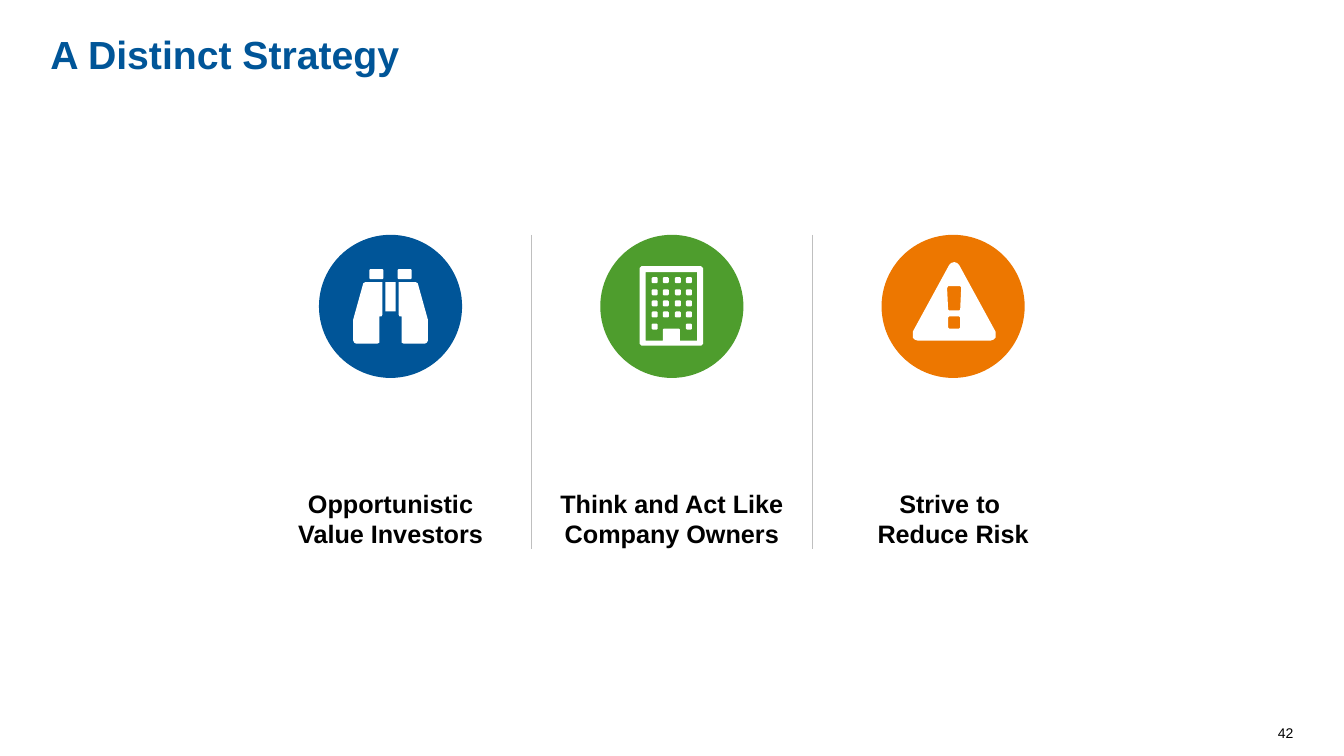
from dataclasses import dataclass

from lxml import etree
from pptx import Presentation
from pptx.dml.color import RGBColor
from pptx.enum.shapes import MSO_CONNECTOR, MSO_SHAPE
from pptx.enum.text import MSO_ANCHOR, PP_ALIGN
from pptx.oxml.ns import qn
from pptx.util import Inches, Pt

OVAL = MSO_SHAPE.OVAL
STRAIGHT = MSO_CONNECTOR.STRAIGHT
LEFT, CENTER, RIGHT = PP_ALIGN.LEFT, PP_ALIGN.CENTER, PP_ALIGN.RIGHT
TOP, BOTTOM = MSO_ANCHOR.TOP, MSO_ANCHOR.BOTTOM


@dataclass(frozen=True)
class Theme:
    font: str = "Arial"
    blue: str = "005598"
    green: str = "4E9D2D"
    orange: str = "ED7700"
    gray: str = "BFBFBF"
    black: str = "000000"
    white: str = "FFFFFF"
    title_size: int = 28
    label_size: int = 18
    number_size: int = 10
    rule_width: int = 1


class SlideBuilder:
    def __init__(self, presentation, theme):
        self.theme = theme
        self.column = presentation.slide_width / 100
        self.row = presentation.slide_height / 100
        self.slide = presentation.slides.add_slide(presentation.slide_layouts[6])

    def place(self, left, top, width, height):
        return (round(left * self.column), round(top * self.row),
                round(width * self.column), round(height * self.row))

    def text(self, words, box, size, color, bold=False, align=LEFT, anchor=TOP):
        frame = self.slide.shapes.add_textbox(*self.place(*box)).text_frame
        frame.word_wrap = True
        frame.vertical_anchor = anchor
        frame.margin_left = frame.margin_right = 0
        frame.margin_top = frame.margin_bottom = 0
        frame.text = words
        paragraph = frame.paragraphs[0]
        paragraph.alignment = align
        for run in paragraph.runs:
            run.font.name = self.theme.font
            run.font.size = Pt(size)
            run.font.bold = bold
            run.font.color.rgb = RGBColor.from_string(color)

    def divider(self, x, top, bottom):
        left, start, right, end = self.place(x, top, x, bottom)
        line = self.slide.shapes.add_connector(STRAIGHT, left, start, right, end)
        line.line.color.rgb = RGBColor.from_string(self.theme.gray)
        line.line.width = Pt(self.theme.rule_width)
        etree.SubElement(line._element.spPr, qn("a:effectLst"))

    def paint(self, shape, color):
        shape.shadow.inherit = False
        shape.fill.solid()
        shape.fill.fore_color.rgb = RGBColor.from_string(color)
        shape.line.fill.background()

    def circle(self, box, color):
        self.paint(self.slide.shapes.add_shape(OVAL, *self.place(*box)), color)

    def icon(self, outlines, x, y):
        builder = self.slide.shapes.build_freeform(*outlines[0][0], scale=Inches(0.01))
        for index, outline in enumerate(outlines):
            if index:
                builder.move_to(*outline[0])
            builder.add_line_segments(outline[1:], close=True)
        shape = builder.convert_to_shape(round(x * self.column), round(y * self.row))
        self.paint(shape, self.theme.white)


def soft_box(left, top, right, bottom, corner=1):
    return [(left + corner, top), (right - corner, top),
            (right, top + corner), (right, bottom - corner),
            (right - corner, bottom), (left + corner, bottom),
            (left, bottom - corner), (left, top + corner)]


def binoculars():
    barrel = [(8, -24), (25, -24), (27, -23), (37, 13), (37, 34), (36, 36),
              (34, 37), (13, 37), (11, 36), (11, 10), (9, 10), (8, 8)]
    halves = [soft_box(7, -37, 21, -27), barrel]
    mirrored = [[(-x, y) for x, y in outline] for outline in halves]
    bridge = [(-5, -24), (5, -24), (5, 5), (-5, 5)]
    return halves + mirrored + [bridge]


def building():
    interior = [(-26, -34), (25, -34), (25, 34), (8, 34), (8, 23), (7, 22),
                (-8, 22), (-9, 23), (-9, 34), (-26, 34)]
    outlines = [soft_box(-32, -40, 31, 39, 2), interior]
    for floor in range(5):
        for bay in range(4):
            if floor < 4 or bay in (0, 3):
                left = -20 + round(bay * 11.4)
                top = -29 + round(floor * 11.5)
                outlines.append(soft_box(left, top, left + 6, top + 6))
    return outlines


def warning():
    triangle = [(1, -44), (4, -43), (6, -41), (42, 25), (42, 31), (40, 33),
                (37, 34), (-35, 34), (-38, 33), (-40, 31), (-40, 25),
                (-4, -41), (-2, -43)]
    stroke = [(-5, -20), (7, -20), (8, -19), (7, 3), (6, 4), (-4, 4),
              (-5, 3), (-6, -18)]
    return [triangle, stroke, soft_box(-5, 10, 7, 22)]


def main():
    presentation = Presentation()
    presentation.slide_width = Inches(13.33)
    presentation.slide_height = Inches(7.5)
    theme = Theme()
    builder = SlideBuilder(presentation, theme)

    builder.text("A Distinct Strategy", (3.75, 4, 71.25, 13.33),
                 theme.title_size, theme.blue, bold=True)
    builder.text("42", (93.23, 95.33, 3, 2.67), theme.number_size, theme.black,
                 align=RIGHT, anchor=BOTTOM)

    first_center, pitch, center_y = 29.06, 20.93, 40.53
    circle_width, circle_height = 10.65, 18.93
    label_width, label_top, label_height = 17.25, 64.53, 8.13
    circle_top, label_bottom = center_y - circle_height / 2, label_top + label_height

    pillars = [
        ("Opportunistic Value Investors", theme.blue, binoculars()),
        ("Think and Act Like Company Owners", theme.green, building()),
        ("Strive to \vReduce Risk", theme.orange, warning()),
    ]
    for index, (label, color, outlines) in enumerate(pillars):
        center = first_center + index * pitch
        if index:
            builder.divider(center - pitch / 2, circle_top, label_bottom)
        builder.circle((center - circle_width / 2, circle_top,
                        circle_width, circle_height), color)
        builder.icon(outlines, center, center_y)
        builder.text(label, (center - label_width / 2, label_top,
                             label_width, label_height),
                     theme.label_size, theme.black, bold=True, align=CENTER)

    presentation.save("out.pptx")


if __name__ == "__main__":
    main()
